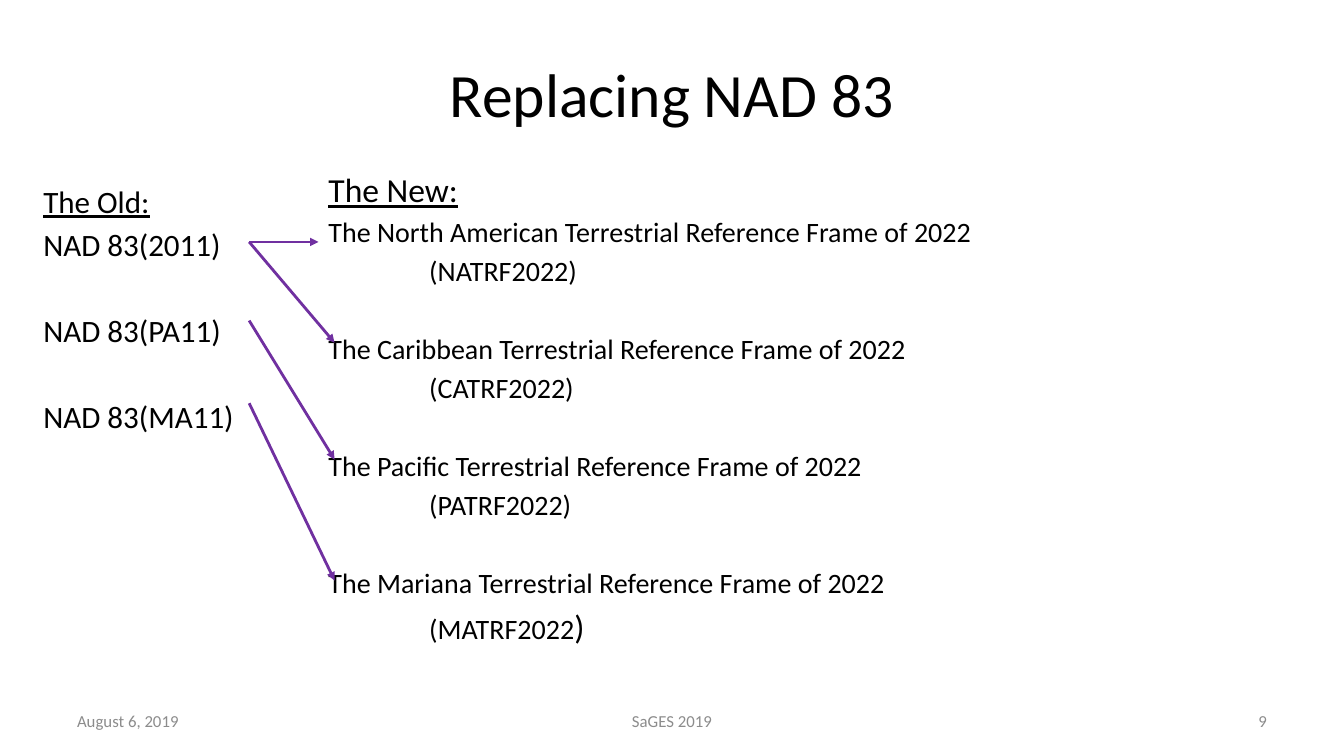
from dataclasses import dataclass

import lxml.etree
import pptx
import pptx.dml.color
import pptx.enum.shapes
import pptx.enum.text
import pptx.oxml.ns
import pptx.util

Pt = pptx.util.Pt
ALIGN = pptx.enum.text.PP_ALIGN
ANCHOR = pptx.enum.text.MSO_ANCHOR
COLORS = {"ink": "000000", "foot": "8C8C8C", "arrow": "7030A0"}
FONT = "Calibri"


@dataclass
class Line:
    text: str
    size: float
    before: float = 0
    under: bool = False
    indent: float = 0
    tail: str = ""


@dataclass
class Foot:
    text: str
    left: float
    width: float
    align: ALIGN


@dataclass
class Arrow:
    start: tuple[float, float]
    end: tuple[float, float]


def hue(name: str) -> pptx.dml.color.RGBColor:
    return pptx.dml.color.RGBColor.from_string(COLORS[name])


def add_run(para, text: str, size: float, under: bool, color: str) -> None:
    run = para.add_run()
    run.text = text
    run.font.name = FONT
    run.font.size = Pt(size)
    run.font.underline = under
    run.font.color.rgb = hue(color)


def add_text(slide, lines: list[Line], left: float, top: float, width: float, height: float, *,
             color: str = "ink", align: ALIGN = ALIGN.LEFT, anchor: ANCHOR = ANCHOR.TOP) -> None:
    frame = slide.shapes.add_textbox(Pt(left), Pt(top), Pt(width), Pt(height)).text_frame
    frame.word_wrap = True
    frame.vertical_anchor = anchor
    for i, line in enumerate(lines):
        para = frame.add_paragraph() if i else frame.paragraphs[0]
        para.alignment = align
        para.space_before = Pt(line.before)
        if line.indent:
            para._p.get_or_add_pPr().set("marL", str(Pt(line.indent)))
        add_run(para, line.text, line.size, line.under, color)
        if line.tail:
            add_run(para, line.tail, 24, False, color)


def add_arrow(slide, arrow: Arrow) -> None:
    kind = pptx.enum.shapes.MSO_CONNECTOR.STRAIGHT
    link = slide.shapes.add_connector(kind, *map(Pt, arrow.start + arrow.end))
    link.line.color.rgb = hue("arrow")
    link.line.width = Pt(2)
    qn = pptx.oxml.ns.qn
    lxml.etree.SubElement(link.line._get_or_add_ln(), qn("a:tailEnd"), type="triangle")
    lxml.etree.SubElement(link._element.spPr, qn("a:effectLst"))


def old_lines() -> list[Line]:
    names = ["2011", "PA11", "MA11"]
    return [Line("The Old:", 22.2, under=True)] + [
        Line(f"NAD 83({name})", 22.2, before=35 if i else 4) for i, name in enumerate(names)]


def new_lines() -> list[Line]:
    frames = {"North American": "NATRF", "Caribbean": "CATRF", "Pacific": "PATRF", "Mariana": "MATRF"}
    lines = [Line("The New:", 24, under=True)]
    for i, (place, code) in enumerate(frames.items()):
        last = i == len(frames) - 1
        lines.append(Line(f"The {place} Terrestrial Reference Frame of 2022", 20,
                          before=31.8 if i else 3.7))
        lines.append(Line(f"({code}2022" + ("" if last else ")"), 20, indent=72,
                          before=4.4 if last else 3.7, tail=")" if last else ""))
    return lines


FEET = [
    Foot("August 6, 2019", 48, 224, ALIGN.LEFT),
    Foot("SaGES 2019", 328, 304, ALIGN.CENTER),
    Foot("9", 688, 224, ALIGN.RIGHT),
]
ARROWS = [
    Arrow((178, 172.8), (227.5, 172.8)),
    Arrow((178, 172.8), (239, 244.8)),
    Arrow((178, 229), (239, 328.3)),
    Arrow((178, 288), (239, 414.7)),
]


def main() -> None:
    deck = pptx.Presentation()
    deck.slide_width, deck.slide_height = Pt(960), Pt(540)
    slide = deck.slides.add_slide(deck.slide_layouts[6])
    add_text(slide, [Line("Replacing NAD 83", 44)], 48, 21.6, 864, 90,
             align=ALIGN.CENTER, anchor=ANCHOR.MIDDLE)
    add_text(slide, old_lines(), 23.8, 126.7, 215.3, 185.8)
    add_text(slide, new_lines(), 227.5, 117.4, 498.2, 378)
    for foot in FEET:
        add_text(slide, [Line(foot.text, 12)], foot.left, 500.4, foot.width, 28.8,
                 color="foot", align=foot.align, anchor=ANCHOR.MIDDLE)
    for arrow in ARROWS:
        add_arrow(slide, arrow)
    deck.save("out.pptx")


if __name__ == "__main__":
    main()
